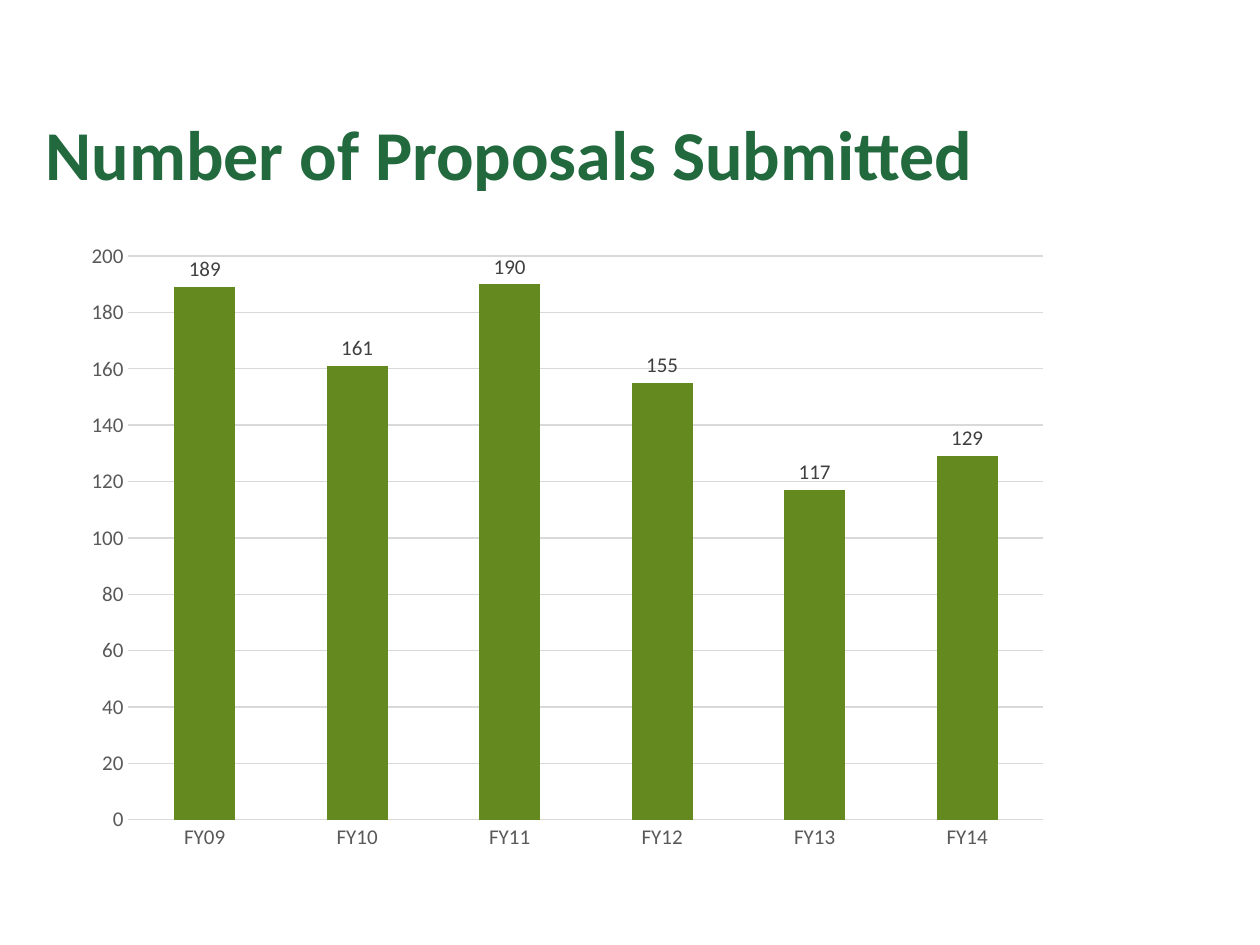
"""Build a slide charting the number of proposals submitted per fiscal year."""
from dataclasses import dataclass

import pptx
import pptx.chart.data
import pptx.dml.color
import pptx.enum.chart
import pptx.enum.text
import pptx.util

Pt = pptx.util.Pt
RGB = pptx.dml.color.RGBColor.from_string


@dataclass(frozen=True)
class Theme:
    font: str = "Calibri"
    title_color: str = "22693E"
    bar_color: str = "63891F"
    axis_color: str = "595959"
    label_color: str = "404040"
    grid_color: str = "D9D9D9"
    title_size: int = 40
    chart_size: int = 12


theme = Theme()
proposals = {"FY09": 189, "FY10": 161, "FY11": 190, "FY12": 155, "FY13": 117, "FY14": 129}


def style_font(font, size, color):
    font.name = theme.font
    font.size = Pt(size)
    font.color.rgb = RGB(color)


deck = pptx.Presentation()
deck.slide_width, deck.slide_height = Pt(720), Pt(540)
slide = deck.slides.add_slide(deck.slide_layouts[6])

title = slide.shapes.add_textbox(Pt(-52), Pt(42), Pt(648), Pt(90)).text_frame
title.word_wrap = True
title.vertical_anchor = pptx.enum.text.MSO_ANCHOR.MIDDLE
heading = title.paragraphs[0]
heading.alignment = pptx.enum.text.PP_ALIGN.CENTER
heading_properties = heading._p.get_or_add_pPr()
heading_properties.set("marL", str(Pt(38)))
heading_properties.set("indent", "0")
heading_run = heading.add_run()
heading_run.text = "Number of Proposals Submitted"
heading_run.font.bold = True
style_font(heading_run.font, theme.title_size, theme.title_color)

proposal_data = pptx.chart.data.CategoryChartData()
proposal_data.categories = list(proposals)
proposal_data.add_series("Series 1", list(proposals.values()))
chart = slide.shapes.add_chart(
    pptx.enum.chart.XL_CHART_TYPE.COLUMN_CLUSTERED,
    Pt(41), Pt(132), Pt(566.6), Pt(360.7), proposal_data,
).chart
chart.has_legend = False
chart.has_title = False
style_font(chart.font, theme.chart_size, theme.axis_color)

for axis in (chart.category_axis, chart.value_axis):
    axis.major_tick_mark = pptx.enum.chart.XL_TICK_MARK.NONE
    axis.minor_tick_mark = pptx.enum.chart.XL_TICK_MARK.NONE
    axis.format.line.fill.background()
    style_font(axis.tick_labels.font, theme.chart_size, theme.axis_color)

scale = chart.value_axis
scale.minimum_scale, scale.maximum_scale, scale.major_unit = 0, 200, 20
scale.has_major_gridlines = True
scale.major_gridlines.format.line.color.rgb = RGB(theme.grid_color)
scale.major_gridlines.format.line.width = Pt(0.75)

bars = chart.plots[0]
bars.gap_width = 150
bars.vary_by_categories = False
bars.series[0].format.fill.solid()
bars.series[0].format.fill.fore_color.rgb = RGB(theme.bar_color)
bars.has_data_labels = True
counts = bars.data_labels
counts.show_value = True
counts.position = pptx.enum.chart.XL_LABEL_POSITION.OUTSIDE_END
style_font(counts.font, theme.chart_size, theme.label_color)

deck.save("out.pptx")
